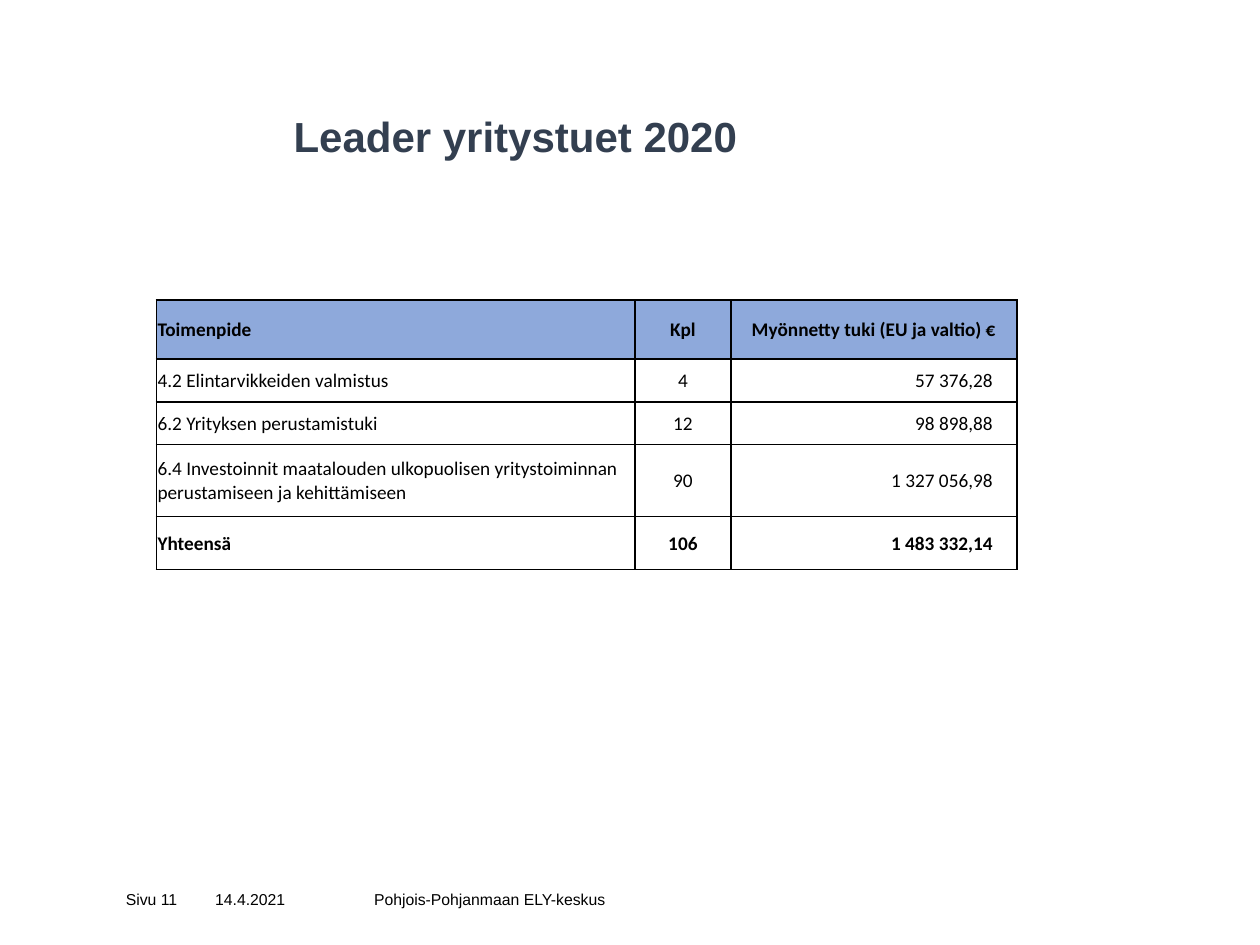
from lxml.etree import SubElement
from pptx import Presentation
from pptx.dml.color import RGBColor
from pptx.enum.text import MSO_ANCHOR, PP_ALIGN
from pptx.oxml.ns import qn
from pptx.util import Inches, Pt

BLACK = "000000"
HEADER_FILL = "8EA9DB"
TITLE_COLOR = "333F50"

COLUMN_WIDTHS = [3.8, 0.76, 2.27]
ROW_HEIGHTS = [0.47, 0.34, 0.34, 0.57, 0.42]
ROWS = [
    ["Toimenpide", "Kpl", "Myönnetty tuki (EU ja valtio) €"],
    ["4.2 Elintarvikkeiden valmistus", "4", "57 376,28"],
    ["6.2 Yrityksen perustamistuki", "12", "98 898,88"],
    ["6.4 Investoinnit maatalouden ulkopuolisen yritystoiminnan "
     "perustamiseen ja kehittämiseen", "90", "1 327 056,98"],
    ["Yhteensä", "106", "1 483 332,14"],
]
FOOTER = [
    ("Sivu 11", 0.9, 0.71),
    ("14.4.2021", 1.61, 1.26),
    ("Pohjois-Pohjanmaan ELY-keskus", 2.87, 4.41),
]


def rgb(color):
    return RGBColor.from_string(color)


def write(text_frame, text, alignment, font, size, bold=False, color=BLACK):
    paragraph = text_frame.paragraphs[0]
    paragraph.alignment = alignment
    run = paragraph.add_run()
    run.text = text
    formats = {"name": font, "size": Pt(size), "bold": bold}
    for attribute, value in formats.items():
        setattr(run.font, attribute, value)
    run.font.color.rgb = rgb(color)


def add_text(slide, box, side_margin, text, alignment, **formats):
    shape = slide.shapes.add_textbox(*map(Inches, box))
    margins = {"margin_left": side_margin, "margin_right": side_margin,
               "margin_top": 0, "margin_bottom": 0}
    for attribute, value in margins.items():
        setattr(shape.text_frame, attribute, Inches(value))
    shape.text_frame.word_wrap = True
    shape.text_frame.vertical_anchor = MSO_ANCHOR.MIDDLE
    write(shape.text_frame, text, alignment, "Arial", **formats)


def add_borders(cell):
    properties = cell._tc.get_or_add_tcPr()
    for side in ("lnL", "lnR", "lnT", "lnB"):
        line = SubElement(properties, qn(f"a:{side}"), w=str(Pt(1)))
        fill = SubElement(line, qn("a:solidFill"))
        SubElement(fill, qn("a:srgbClr"), val=BLACK)


def format_cell(cell, text, row, column):
    is_amount = column == 2 and row > 0
    margins = {"left": 0.01, "top": 0.01, "bottom": 0,
               "right": 0.19 if is_amount else 0.01}
    for side, value in margins.items():
        setattr(cell, f"margin_{side}", Inches(value))
    cell.vertical_anchor = MSO_ANCHOR.MIDDLE
    add_borders(cell)
    if row == 0:
        cell.fill.solid()
        cell.fill.fore_color.rgb = rgb(HEADER_FILL)
    else:
        cell.fill.background()

    if is_amount:
        alignment = PP_ALIGN.RIGHT
    else:
        alignment = PP_ALIGN.CENTER if column else PP_ALIGN.LEFT
    write(cell.text_frame, text, alignment, "Calibri", 11,
          bold=row in (0, len(ROWS) - 1))


def add_support_table(slide, left, top):
    table = slide.shapes.add_table(
        len(ROWS), len(COLUMN_WIDTHS), Inches(left), Inches(top),
        Inches(sum(COLUMN_WIDTHS)), Inches(sum(ROW_HEIGHTS))).table
    for column, width in zip(table.columns, COLUMN_WIDTHS):
        column.width = Inches(width)
    for row, height in zip(table.rows, ROW_HEIGHTS):
        row.height = Inches(height)
    for row, texts in enumerate(ROWS):
        for column, text in enumerate(texts):
            format_cell(table.cell(row, column), text, row, column)


def add_footer(slide, top, height):
    for text, left, width in FOOTER:
        add_text(slide, (left, top, width, height), 0.1, text,
                 PP_ALIGN.LEFT, size=9)


def main():
    presentation = Presentation()
    presentation.slide_width = Inches(10)
    presentation.slide_height = Inches(7.5)
    slide = presentation.slides.add_slide(presentation.slide_layouts[6])

    # Title
    add_text(slide, (0.9, 0.84, 6.38, 0.47), 0, "Leader yritystuet 2020",
             PP_ALIGN.CENTER, size=24, bold=True, color=TITLE_COLOR)
    # Granted support by measure
    add_support_table(slide, 1.24, 2.38)
    # Page number, date and organisation
    add_footer(slide, 7.06, 0.15)

    presentation.save("out.pptx")


if __name__ == "__main__":
    main()
